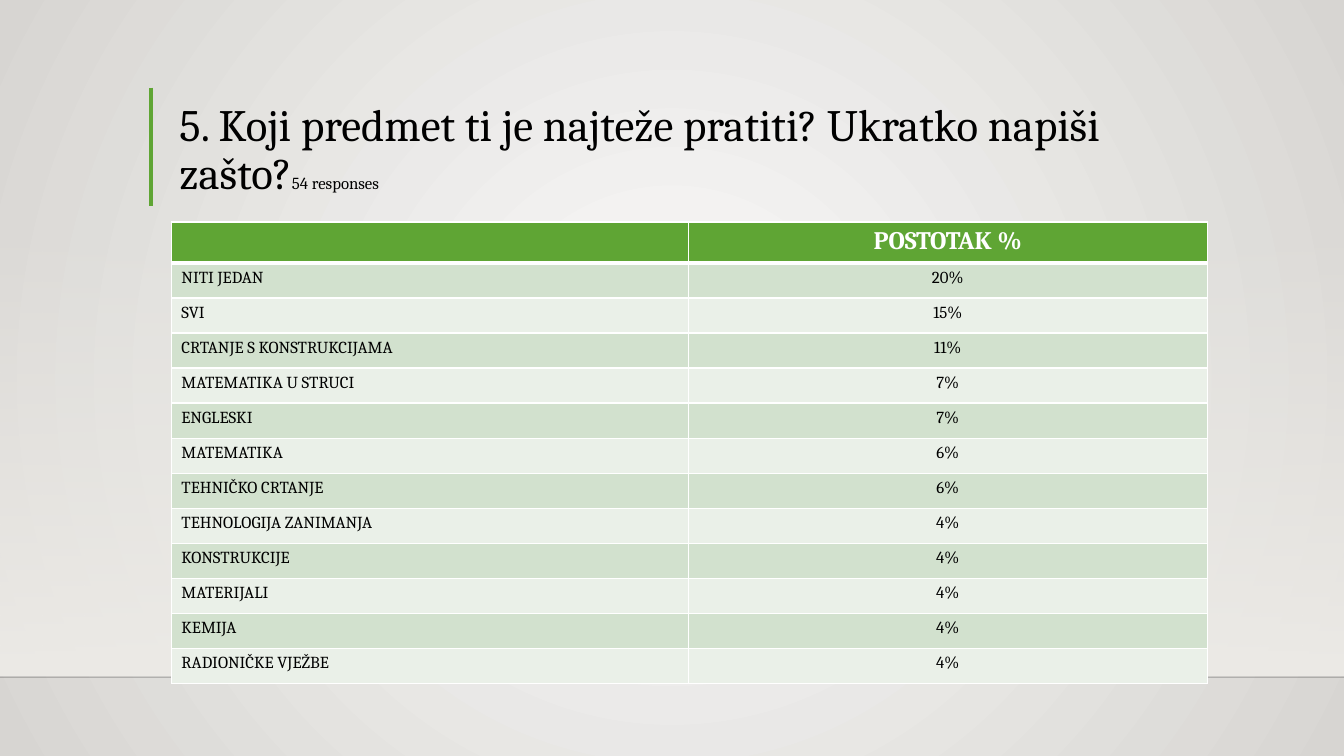
from lxml.etree import SubElement
from pptx import Presentation
from pptx.dml.color import RGBColor
from pptx.enum.shapes import MSO_CONNECTOR, MSO_SHAPE
from pptx.enum.text import MSO_ANCHOR, MSO_AUTO_SIZE, PP_ALIGN
from pptx.oxml.ns import qn
from pptx.util import Pt

BLACK = RGBColor(0x00, 0x00, 0x00)
RULE = RGBColor(0x00, 0x00, 0x01)
WHITE = RGBColor(0xFF, 0xFF, 0xFF)
GREEN = RGBColor(0x5F, 0xA5, 0x34)
BAND_DARK = RGBColor(0xD2, 0xE1, 0xCE)
BAND_LIGHT = RGBColor(0xEA, 0xF0, 0xE8)
GLOW = RGBColor(0xFA, 0xFA, 0xF9)
EDGE = RGBColor(0xD7, 0xD5, 0xD2)
WALL = RGBColor(0xED, 0xEB, 0xE7)

WIDTH, HEIGHT = 960, 540
HEADER = ("", "POSTOTAK %")
SUBJECTS = [
    ("NITI JEDAN", 20),
    ("SVI", 15),
    ("CRTANJE S KONSTRUKCIJAMA", 11),
    ("MATEMATIKA U STRUCI", 7),
    ("ENGLESKI", 7),
    ("MATEMATIKA", 6),
    ("TEHNIČKO CRTANJE", 6),
    ("TEHNOLOGIJA ZANIMANJA", 4),
    ("KONSTRUKCIJE", 4),
    ("MATERIJALI", 4),
    ("KEMIJA", 4),
    ("RADIONIČKE VJEŽBE", 4),
]


def add_text(p, text, size=12, color=BLACK, bold=False, align=None):
    p.alignment = align
    r = p.add_run()
    r.text = text
    r.font.name = "Cambria"
    r.font.size = Pt(size)
    r.font.bold = bold
    r.font.color.rgb = color


def set_alpha(fill_parent, percent):
    """Set the opacity of the first colour found under the element."""
    color = next(fill_parent.iter(qn("a:srgbClr")))
    SubElement(color, qn("a:alpha"), val=str(percent * 1000))


def set_stops(fill, start, end):
    fill.gradient()
    for stop, color, position in zip(fill.gradient_stops, (start, end), (0, 1)):
        stop.color.rgb = color
        stop.position = position


def set_borders(cell, bottom):
    tc_pr = cell._tc.get_or_add_tcPr()
    widths = {"lnL": 1, "lnR": 1, "lnT": 1, "lnB": bottom}
    for index, (side, width) in enumerate(widths.items()):
        ln = SubElement(tc_pr, qn(f"a:{side}"), w=str(Pt(width)))
        fill = SubElement(ln, qn("a:solidFill"))
        SubElement(fill, qn("a:srgbClr"), val=str(WHITE))
        tc_pr.insert(index, ln)


class SlideBuilder:
    def __init__(self, slide):
        self.s = slide

    def background(self, center, edge):
        fill = self.s.background.fill
        set_stops(fill, center, edge)
        grad = next(self.s.element.iter(qn("a:gradFill")))
        grad.remove(grad.find(qn("a:lin")))
        circle = SubElement(grad, qn("a:path"), path="circle")
        SubElement(circle, qn("a:fillToRect"),
                   {side: "50000" for side in "ltrb"})

    def fading_band(self, x, y, w, h, color):
        """Draw a rectangle that fades in from top to bottom."""
        sp = self.s.shapes.add_shape(
            MSO_SHAPE.RECTANGLE, Pt(x), Pt(y), Pt(w), Pt(h))
        sp.shadow.inherit = False
        sp.line.fill.background()
        set_stops(sp.fill, color, color)
        sp.fill.gradient_angle = 270
        set_alpha(sp.element.spPr, 0)

    def line(self, x1, y1, x2, y2, color, width, opacity=100):
        cxn = self.s.shapes.add_connector(
            MSO_CONNECTOR.STRAIGHT, Pt(x1), Pt(y1), Pt(x2), Pt(y2))
        cxn.line.color.rgb = color
        cxn.line.width = Pt(width)
        if opacity < 100:
            set_alpha(cxn.element.spPr, opacity)
        SubElement(cxn.element.spPr, qn("a:effectLst"))

    def title(self, x, y, w, h, text, note):
        sp = self.s.shapes.title
        sp.left, sp.top, sp.width, sp.height = Pt(x), Pt(y), Pt(w), Pt(h)
        tf = sp.text_frame
        tf.word_wrap = True
        tf.auto_size = MSO_AUTO_SIZE.NONE
        tf.vertical_anchor = MSO_ANCHOR.BOTTOM
        p = tf.paragraphs[0]
        p.line_spacing = 0.9
        add_text(p, text, size=32, align=PP_ALIGN.LEFT)
        add_text(p, note, align=PP_ALIGN.LEFT)

    def table(self, x, y, col_widths, header_height, row_height, rows):
        height = header_height + row_height * (len(rows) - 1)
        table = self.s.shapes.add_table(
            len(rows), len(col_widths), Pt(x), Pt(y),
            Pt(sum(col_widths)), Pt(height)).table
        for column, width in zip(table.columns, col_widths):
            column.width = Pt(width)
        for i, values in enumerate(rows):
            header = i == 0
            table.rows[i].height = Pt(header_height if header else row_height)
            band = BAND_DARK if i % 2 else BAND_LIGHT
            for j, value in enumerate(values):
                cell = table.cell(i, j)
                cell.fill.solid()
                cell.fill.fore_color.rgb = GREEN if header else band
                set_borders(cell, bottom=3 if header else 1)
                if value:
                    add_text(cell.text_frame.paragraphs[0], value,
                             size=18 if header else 12,
                             color=WHITE if header else BLACK, bold=header,
                             align=PP_ALIGN.CENTER if j else PP_ALIGN.LEFT)


def main():
    prs = Presentation()
    prs.slide_width, prs.slide_height = Pt(WIDTH), Pt(HEIGHT)
    slide = SlideBuilder(prs.slides.add_slide(prs.slide_layouts[5]))
    slide.background(GLOW, EDGE)
    slide.fading_band(0, 158.4, WIDTH, 324, WALL)
    slide.line(0, 483.8, WIDTH, 483.8, RULE, 1, opacity=20)
    slide.line(108, 62.6, 108, 146.9, GREEN, 3)
    slide.title(121, 63.4, 749.5, 82.8,
                "5. Koji predmet ti je najteže pratiti? Ukratko napiši zašto?",
                "54 responses")
    rows = [HEADER] + [(name, f"{share}%") for name, share in SUBJECTS]
    slide.table(122.4, 158.6, (369.2, 370.8), 28.2, 25.05, rows)
    prs.save("out.pptx")


if __name__ == "__main__":
    main()
